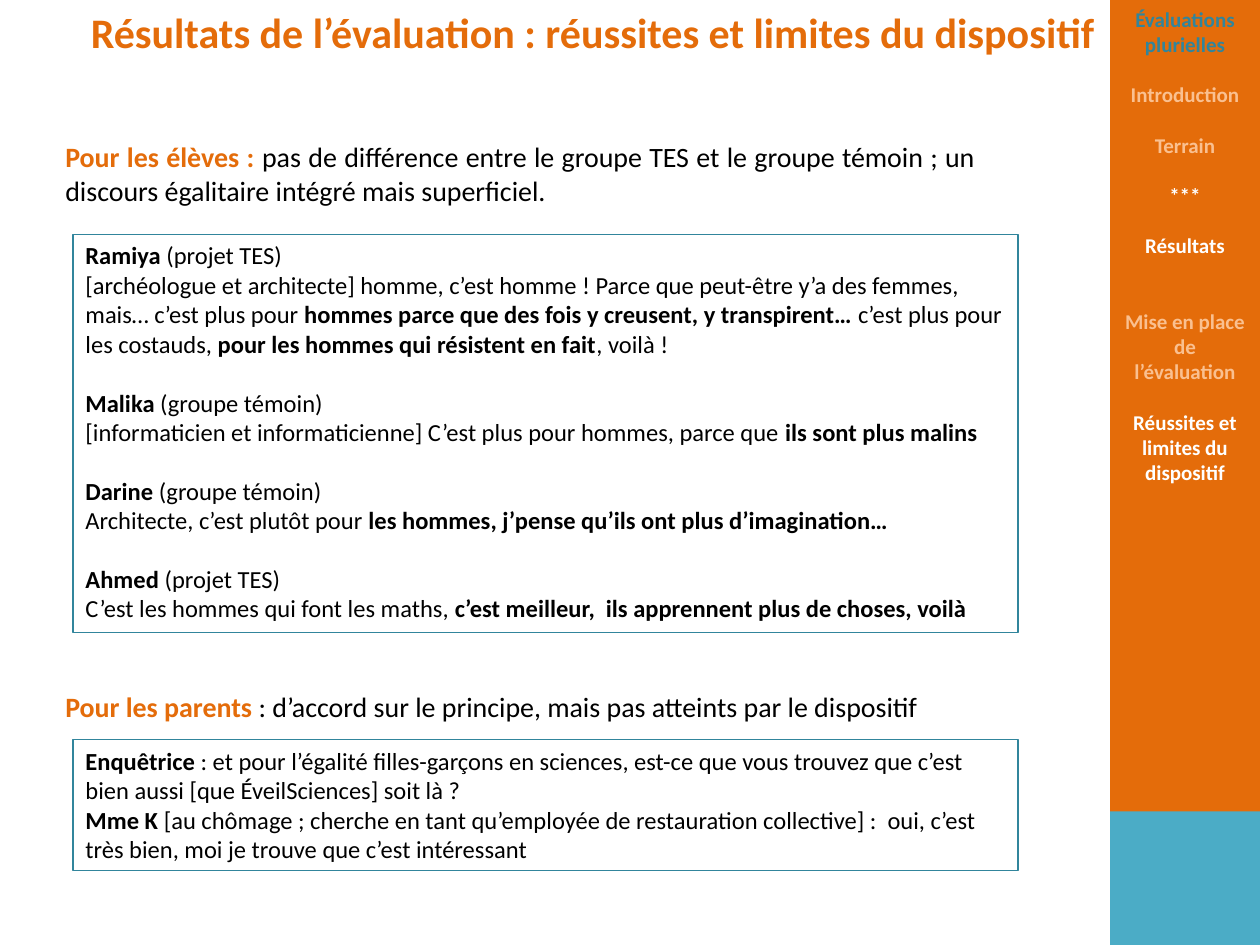
from dataclasses import dataclass
from typing import Optional

from pptx import Presentation
from pptx.dml.color import RGBColor
from pptx.enum import shapes, text
from pptx.util import Inches, Pt

ORANGE = RGBColor(0xE4, 0x6C, 0x0A)
PALE_ORANGE = RGBColor(0xFA, 0xC0, 0x90)
TEAL = RGBColor(0x31, 0x85, 0x9C)
LIGHT_TEAL = RGBColor(0x4B, 0xAC, 0xC6)
BLACK = RGBColor(0, 0, 0)
WHITE = RGBColor(0xFF, 0xFF, 0xFF)

FONT = "Calibri"
QUOTE_GAP = 16.8
MENU_GAP = 14.4


@dataclass(frozen=True)
class Run:
    text: str
    bold: bool = False
    color: RGBColor = BLACK


@dataclass(frozen=True)
class Line:
    runs: tuple[Run, ...]
    space_before: float = 0


@dataclass(frozen=True)
class Box:
    left: float
    top: float
    width: float
    height: float

    def lengths(self) -> tuple:
        return tuple(Inches(n) for n in (self.left, self.top, self.width, self.height))


def bold(words: str, color: RGBColor = BLACK) -> Run:
    return Run(words, True, color)


def speaker(name: str, group: str, space_before: float = QUOTE_GAP) -> Line:
    return Line((bold(name), Run(f" ({group})")), space_before)


def menu(words: str, color: RGBColor, blank_lines: int = 1) -> Line:
    return Line((bold(words, color),), blank_lines * MENU_GAP)


TITLE = [Line((bold("Résultats de l’évaluation : réussites et limites du dispositif", ORANGE),))]
PUPILS = [Line((
    bold("Pour les élèves : ", ORANGE),
    Run("pas de différence entre le groupe TES et le groupe témoin ; un discours "
        "égalitaire intégré mais superficiel."),
))]
PARENTS = [Line((
    bold("Pour les parents ", ORANGE),
    Run(": d’accord sur le principe, mais pas atteints par le dispositif"),
))]
PUPIL_QUOTES = [
    speaker("Ramiya", "projet TES", 0),
    Line((
        Run("[archéologue et architecte] homme, c’est homme ! Parce que peut-être y’a "
            "des femmes, mais… c’est plus pour "),
        bold("hommes parce que des fois y creusent, y transpirent… "),
        Run("c’est plus pour les costauds, "),
        bold("pour les hommes qui résistent en fait"),
        Run(", voilà !"),
    )),
    speaker("Malika", "groupe témoin"),
    Line((
        Run("[informaticien et informaticienne] C’est plus pour hommes, parce que"),
        bold(" ils sont plus malins"),
    )),
    speaker("Darine", "groupe témoin"),
    Line((
        Run("Architecte, c’est plutôt pour "),
        bold("les hommes, j’pense qu’ils ont plus d’imagination…"),
    )),
    speaker("Ahmed", "projet TES"),
    Line((
        Run("C’est les hommes qui font les maths, "),
        bold("c’est meilleur,  ils apprennent plus de choses, voilà"),
    )),
]
PARENT_QUOTES = [
    Line((
        bold("Enquêtrice"),
        Run(" : et pour l’égalité filles-garçons en sciences, est-ce que vous trouvez "
            "que c’est bien aussi [que ÉveilSciences] soit là ?"),
    )),
    Line((
        bold("Mme K "),
        Run("[au chômage ; cherche en tant qu’employée de restauration collective] :  "
            "oui, c’est très bien, moi je trouve que c’est intéressant"),
    )),
]
MENU = [
    menu("Évaluations plurielles", TEAL, 0),
    menu("Introduction", PALE_ORANGE),
    menu("Terrain", PALE_ORANGE),
    menu("***", WHITE),
    menu("Résultats", WHITE),
    menu("Mise en place de l’évaluation", PALE_ORANGE, 2),
    menu("Réussites et limites du dispositif", WHITE),
]


def write_text(shape, lines: list[Line], *, size: float, wrap: bool = True,
               align=text.PP_ALIGN.LEFT, margin_top: float = 0.05) -> None:
    frame = shape.text_frame
    frame.word_wrap = wrap
    frame.vertical_anchor = text.MSO_ANCHOR.TOP
    frame.margin_top = Inches(margin_top)
    for index, line in enumerate(lines):
        paragraph = frame.add_paragraph() if index else frame.paragraphs[0]
        paragraph.alignment = align
        paragraph.space_before = Pt(line.space_before)
        for part in line.runs:
            run = paragraph.add_run()
            run.text = part.text
            run.font.name = FONT
            run.font.size = Pt(size)
            run.font.bold = part.bold
            run.font.color.rgb = part.color


def add_text(slide, box: Box, lines: list[Line], **text_format) -> None:
    write_text(slide.shapes.add_textbox(*box.lengths()), lines, **text_format)


def add_rectangle(slide, box: Box, *, fill: Optional[RGBColor] = None,
                  line: Optional[RGBColor] = None):
    shape = slide.shapes.add_shape(shapes.MSO_SHAPE.RECTANGLE, *box.lengths())
    shape.shadow.inherit = False
    if fill is None:
        shape.fill.background()
    else:
        shape.fill.solid()
        shape.fill.fore_color.rgb = fill
    if line is None:
        shape.line.fill.background()
    else:
        shape.line.color.rgb = line
        shape.line.width = Pt(0.75)
    return shape


def main() -> None:
    presentation = Presentation()
    presentation.slide_width = Inches(10)
    presentation.slide_height = Inches(7.5)
    slide = presentation.slides.add_slide(presentation.slide_layouts[6])

    add_text(slide, Box(0.58, 0, 8.25, 0.5), TITLE, size=24, wrap=False,
             align=text.PP_ALIGN.CENTER)
    add_text(slide, Box(0.42, 0.74, 7.42, 5.96), PUPILS, size=16,
             align=text.PP_ALIGN.JUSTIFY, margin_top=0.37)
    pupil_frame = add_rectangle(slide, Box(0.58, 1.86, 7.5, 3.16), line=TEAL)
    write_text(pupil_frame, PUPIL_QUOTES, size=14)
    add_text(slide, Box(0.42, 5.42, 7, 0.37), PARENTS, size=16, wrap=False)
    parent_frame = add_rectangle(slide, Box(0.58, 5.87, 7.5, 1.04), line=TEAL)
    write_text(parent_frame, PARENT_QUOTES, size=14)

    sidebar = add_rectangle(slide, Box(8.81, 0, 1.19, 7.24), fill=ORANGE)
    write_text(sidebar, MENU, size=12, align=text.PP_ALIGN.CENTER)
    add_rectangle(slide, Box(8.81, 6.44, 1.19, 1.06), fill=LIGHT_TEAL)

    presentation.save("out.pptx")


if __name__ == "__main__":
    main()
